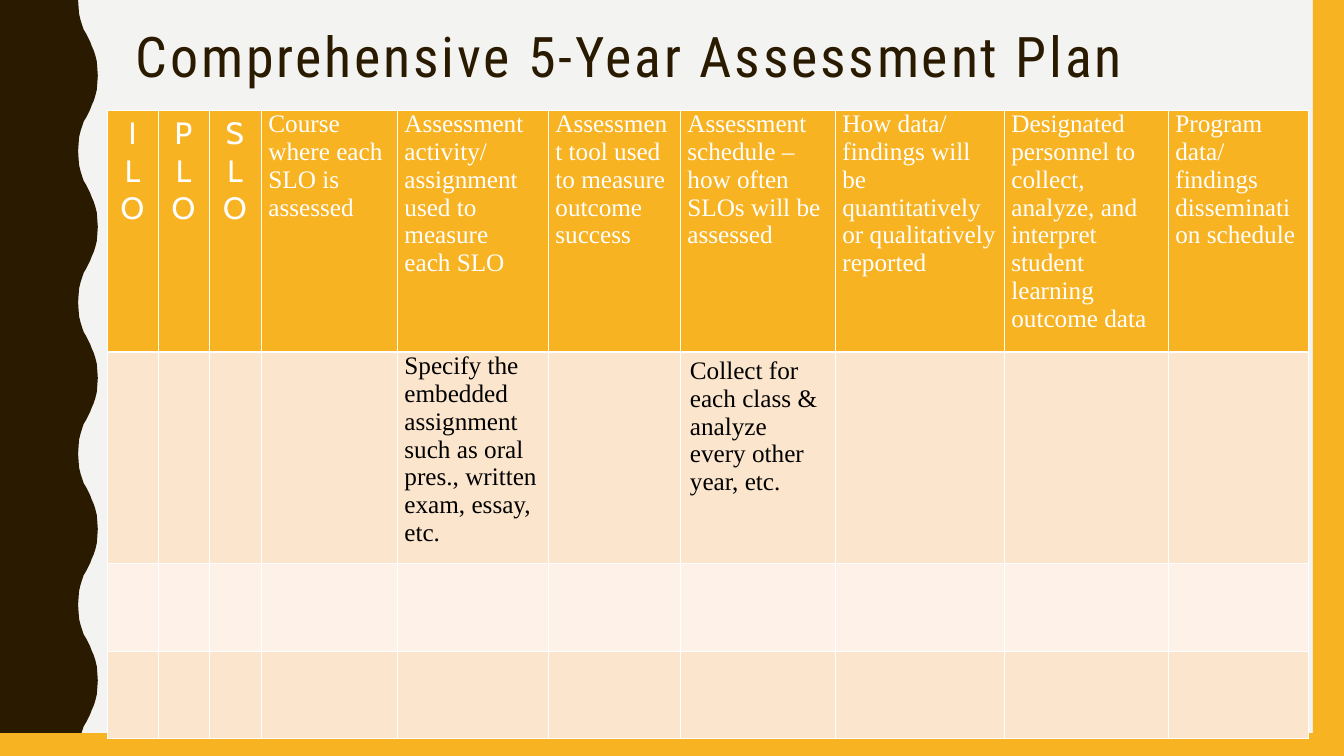
from lxml.etree import SubElement
from pptx import Presentation
from pptx.dml.color import RGBColor
from pptx.enum.shapes import MSO_SHAPE as SHAPE
from pptx.enum.text import MSO_ANCHOR as ANCHOR, PP_ALIGN as ALIGN
from pptx.oxml.ns import qn
from pptx.util import Pt

PX = 914400 / 50.4
WIDTH, HEIGHT = 1344, 756
COLORS = {"paper": "F3F3F2", "brown": "2A1A00", "gold": "F8B323", "white": "FFFFFF",
          "black": "000000", "peach": "FCE5CD", "cream": "FEF2E8"}

TITLE = "Comprehensive 5-Year Assessment Plan"
TITLE_BOX = (132, 27, 1118, 100)
BARS = [(1313, 0, 31, HEIGHT), (0, 733, WIDTH, 23)]

# Half a period of the wavy edge, in tenths of a pixel
HALF_WAVE = [(781, 0), (786, 76), (791, 141), (806, 202), (822, 252), (837, 297),
             (862, 338), (882, 378), (902, 418), (917, 459), (937, 504), (953, 554),
             (968, 615), (973, 680), (978, 756)]
PERIOD, PERIODS = 1512, 5

TABLE_AT = (107, 110)
COLUMNS = [51, 51, 52, 136, 151, 132, 155, 169, 164, 140]
ROWS = [223, 211, 88, 87]
ROW_FILLS = ["gold", "peach", "cream", "peach"]
OUTCOMES = ["ILO", "PLO", "SLO"]
HEADERS = [
    ["Course", "where each SLO is assessed"],
    ["Assessment activity/", "assignment used to measure each SLO"],
    ["Assessment tool used to measure outcome success"],
    ["Assessment schedule – how often SLOs will be assessed"],
    ["How data/", "findings will be quantitatively or qualitatively reported"],
    ["Designated personnel to collect, analyze, and interpret student "
     "learning outcome data"],
    ["Program", "data/", "findings", "dissemination schedule"],
]
TIGHT, ROOMY = (7.5, 0), (10, 5)
BODY = [
    (4, TIGHT, "Specify the embedded assignment such as oral pres., written exam, essay, etc."),
    (6, ROOMY, "Collect for each class & analyze every other year, etc."),
]


def px(value):
    """Turn pixels into EMU."""
    return round(value * PX)


def paint(fill, color):
    """Give a fill one solid colour."""
    fill.solid()
    fill.fore_color.rgb = RGBColor.from_string(COLORS[color])


def finish(sp, color):
    """Make a shape flat, without line or shadow."""
    paint(sp.fill, color)
    sp.line.fill.background()
    sp.shadow.inherit = False


def write(p, text, font, size, color):
    """Add one run to a paragraph."""
    r = p.add_run()
    r.text = text
    r.font.name, r.font.size, r.font.bold = font, Pt(size), False
    r.font.color.rgb = RGBColor.from_string(COLORS[color])
    return r


def add_wave(s):
    """Draw the dark left band with its wavy edge."""
    mirrored = [(x, PERIOD - y) for x, y in reversed(HALF_WAVE[:-1])]
    edge = [(x, y + n * PERIOD) for n in range(PERIODS) for x, y in HALF_WAVE + mirrored]
    builder = s.shapes.build_freeform(0, 0, scale=PX / 10)
    builder.add_line_segments(edge + [(0, PERIODS * PERIOD)], close=True)
    finish(builder.convert_to_shape(), "brown")


def add_title(s):
    """Add the slide heading."""
    tf = s.shapes.add_textbox(*map(px, TITLE_BOX)).text_frame
    tf.word_wrap, tf.vertical_anchor = True, ANCHOR.TOP
    tf.margin_left = tf.margin_right = px(4)
    p = tf.paragraphs[0]
    p.line_spacing = 0.9
    r = write(p, TITLE, "Roboto Condensed", 80, "brown")
    r.font._element.set("spc", "400")


def set_borders(cell, row):
    """Draw white cell borders, thicker below the header row."""
    tc_pr = cell._tc.get_or_add_tcPr()
    for side in "LRTB":
        thick = (row, side) in ((0, "B"), (1, "T"))
        ln = SubElement(tc_pr, qn(f"a:ln{side}"), w=str(Pt(3 if thick else 1)))
        SubElement(SubElement(ln, qn("a:solidFill")), qn("a:srgbClr"), val=COLORS["white"])


def fill_cell(cell, lines, margins, font, size, color, align=ALIGN.LEFT):
    """Write one paragraph per line into a table cell."""
    cell.margin_left = cell.margin_right = px(margins[0])
    cell.margin_top = cell.margin_bottom = px(margins[1])
    tf = cell.text_frame
    for i, line in enumerate(lines):
        p = tf.add_paragraph() if i else tf.paragraphs[0]
        p.alignment = align
        write(p, line, font, size, color)


def add_plan(s):
    """Add the assessment plan table."""
    size = (sum(COLUMNS), sum(ROWS))
    table = s.shapes.add_table(len(ROWS), len(COLUMNS), *map(px, TABLE_AT + size)).table
    table.horz_banding = False
    for column, width in zip(table.columns, COLUMNS):
        column.width = px(width)
    for i, (row, height) in enumerate(zip(table.rows, ROWS)):
        row.height = px(height)
        for cell in row.cells:
            set_borders(cell, i)
            paint(cell.fill, ROW_FILLS[i])
    for col, letters in enumerate(OUTCOMES):
        fill_cell(table.cell(0, col), letters, ROOMY, "Cabin", 44, "white", ALIGN.CENTER)
    for col, lines in enumerate(HEADERS, len(OUTCOMES)):
        fill_cell(table.cell(0, col), lines, TIGHT, "Times New Roman", 36, "white")
    for col, margins, text in BODY:
        fill_cell(table.cell(1, col), [text], margins, "Times New Roman", 36, "black")


prs = Presentation()
prs.slide_width, prs.slide_height = px(WIDTH), px(HEIGHT)
s = prs.slides.add_slide(prs.slide_layouts[6])
paint(s.background.fill, "paper")
add_wave(s)
for bar in BARS:
    finish(s.shapes.add_shape(SHAPE.RECTANGLE, *map(px, bar)), "gold")
add_title(s)
add_plan(s)
prs.save("out.pptx")
